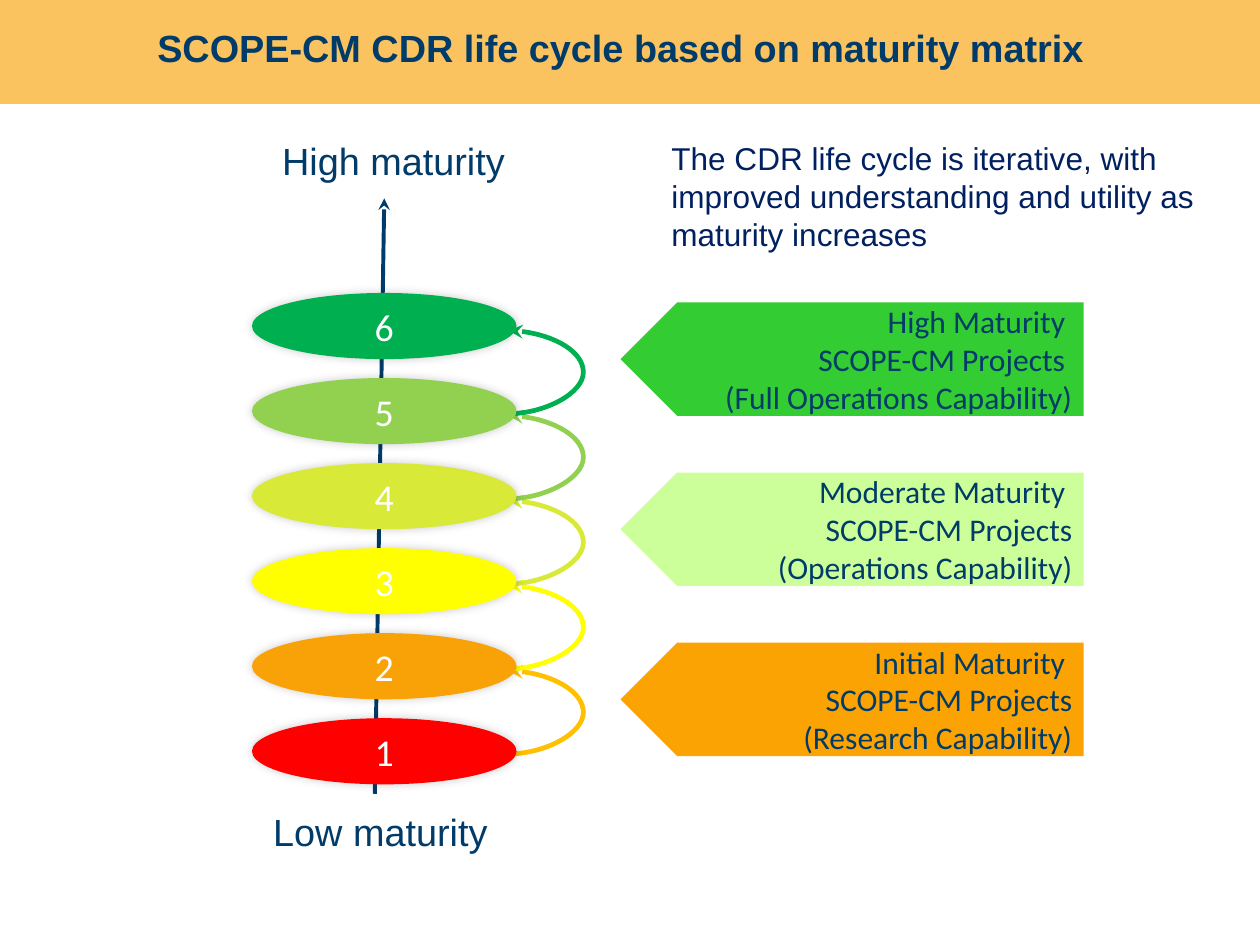
from lxml.etree import SubElement
from pptx import Presentation
from pptx.dml.color import RGBColor
from pptx.enum.shapes import MSO_CONNECTOR as LINK, MSO_SHAPE as SHAPE
from pptx.enum.text import MSO_ANCHOR as ANCHOR, PP_ALIGN as ALIGN
from pptx.oxml.ns import qn
from pptx.util import Inches, Pt

NAVY = "003B69"
WHITE = "FFFFFF"


def rgb(color):
    return RGBColor.from_string(color)


def set_all(target, **values):
    for key, value in values.items():
        setattr(target, key, value)


class Sheet:
    """Draws on one slide; lengths are percent of its width and height."""

    def __init__(self, width, height):
        self.deck = Presentation()
        set_all(self.deck, slide_width=Inches(width), slide_height=Inches(height))
        self.slide = self.deck.slides.add_slide(self.deck.slide_layouts[6])
        self.shapes = self.slide.shapes

    def place(self, x, y):
        return (round(self.deck.slide_width * x / 100),
                round(self.deck.slide_height * y / 100))

    def fill_text(self, frame, lines, size, font="Arial", color=NAVY, bold=False,
                  align=ALIGN.LEFT):
        for number, line in enumerate(lines):
            paragraph = frame.add_paragraph() if number else frame.paragraphs[0]
            paragraph.text = line
            paragraph.alignment = align
            set_all(paragraph.font, size=Pt(size), name=font, bold=bold)
            paragraph.font.color.rgb = rgb(color)

    def text(self, x, y, w, h, line, size=24, wrap=True, insets=None, **style):
        frame = self.shapes.add_textbox(*self.place(x, y), *self.place(w, h)).text_frame
        set_all(frame, word_wrap=wrap, **(insets or {}))
        self.fill_text(frame, [line], size, **style)

    def block(self, kind, x, y, w, h, fill, lines=(), size=24, flip=False,
              glow=False, **style):
        block = self.shapes.add_shape(kind, *self.place(x, y), *self.place(w, h))
        block.shadow.inherit = False
        block.fill.solid()
        block.fill.fore_color.rgb = rgb(fill)
        block.line.fill.background()
        props = block._element.spPr
        if flip:
            props.find(qn("a:xfrm")).set("flipH", "1")
        if glow:
            shadow = SubElement(props.find(qn("a:effectLst")), qn("a:outerShdw"),
                                blurRad=str(Pt(6)), dist="0", dir="18900000")
            black = SubElement(shadow, qn("a:srgbClr"), val="000000")
            SubElement(black, qn("a:alpha"), val="20000")
        block.text_frame.vertical_anchor = ANCHOR.MIDDLE
        self.fill_text(block.text_frame, lines, size, **style)

    def arrow(self, start, end, color, width, bulge=None):
        kind = LINK.CURVE if bulge else LINK.STRAIGHT
        arrow = self.shapes.add_connector(kind, *self.place(*start), *self.place(*end))
        arrow.line.color.rgb = rgb(color)
        arrow.line.width = Pt(width)
        props = arrow._element.spPr
        SubElement(props.find(qn("a:ln")), qn("a:tailEnd"), type="stealth")
        SubElement(props, qn("a:effectLst"))
        if bulge:
            # The bend is measured in multiples of the curve's own width
            bend = round(100000 * bulge / (end[0] - start[0]))
            guides = props.find(qn("a:prstGeom")).get_or_add_avLst()
            SubElement(guides, qn("a:gd"), name="adj1", fmla=f"val {bend}")


LEVELS = ["FF0000", "F8A208", "FFFF00", "D8E937", "92D050", "00B050"]
LOOPS = ["FFC000"] + LEVELS[2:]
STAGES = [
    ("33CC33", ["High Maturity ", "SCOPE-CM Projects ", "(Full Operations Capability)"]),
    ("CCFF99", ["Moderate Maturity ", "SCOPE-CM Projects", "(Operations Capability)"]),
    ("FCA304", ["Initial Maturity ", "SCOPE-CM Projects", "(Research Capability)"]),
]
LEVEL_TOP, LEVEL_HEIGHT, LEVEL_STEP = 76, 7, 9
STAGE_TOP, STAGE_STEP = 32, 18


def main():
    sheet = Sheet(11.11, 8.33)

    # Title band
    sheet.block(SHAPE.RECTANGLE, 0, 0, 100, 11, "FAC360")
    sheet.text(6.5, 2, 85.5, 6, "SCOPE-CM CDR life cycle based on maturity matrix",
               bold=True, align=ALIGN.CENTER)

    # Maturity axis and the loops from each level to the next
    sheet.arrow((29.75, 84), (30.5, 21), NAVY, 2.5)
    for step, color in enumerate(LOOPS):
        middle = LEVEL_TOP + LEVEL_HEIGHT / 2 - step * LEVEL_STEP
        sheet.arrow((40.25, middle + 0.3), (40.4, middle - LEVEL_STEP + 0.5),
                    color, 3, bulge=6.1)

    # Maturity levels, lowest first
    for step, color in enumerate(LEVELS):
        sheet.block(SHAPE.OVAL, 20, LEVEL_TOP - step * LEVEL_STEP, 21, LEVEL_HEIGHT,
                    color, [str(step + 1)], glow=True, font="Calibri", color=WHITE,
                    align=ALIGN.CENTER)

    # Axis ends
    sheet.text(20.8, 85, 19, 6, "Low maturity", wrap=False)
    sheet.text(21.5, 14, 19.7, 6, "High maturity", wrap=False)

    # Explanation
    side, edge = Inches(0.11), Inches(0.06)
    sheet.text(52.3, 14, 45.7, 20,
               "The CDR life cycle is iterative, with improved understanding "
               "and utility as maturity increases", size=20, color="002060",
               insets=dict(margin_left=side, margin_right=side,
                           margin_top=edge, margin_bottom=edge))

    # Project stages
    for row, (color, lines) in enumerate(STAGES):
        sheet.block(SHAPE.PENTAGON, 49.25, STAGE_TOP + row * STAGE_STEP, 36.75, 12,
                    color, lines, size=20, flip=True, font="Calibri", align=ALIGN.RIGHT)

    sheet.deck.save("out.pptx")


if __name__ == "__main__":
    main()
